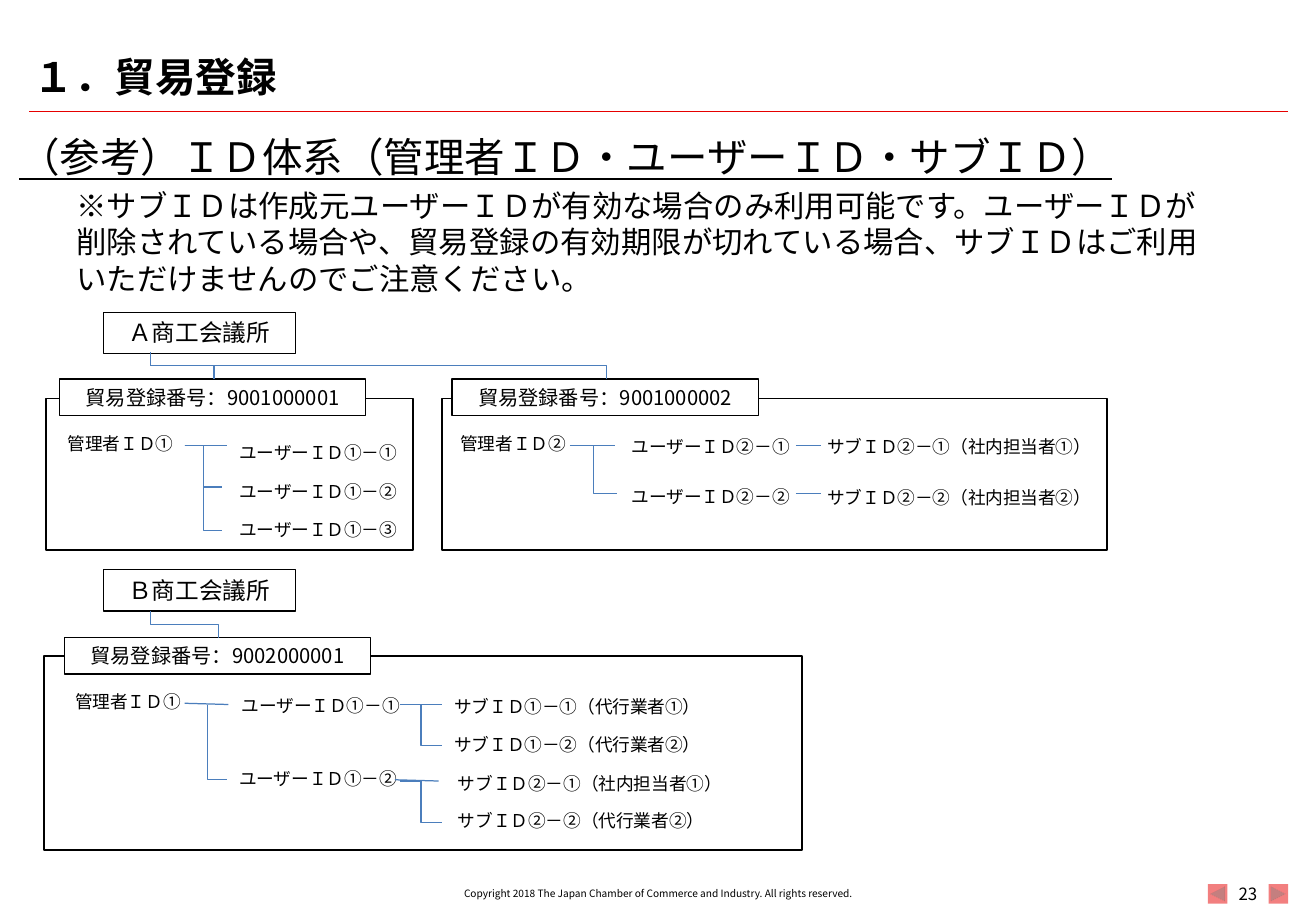
from lxml import etree
from pptx import Presentation
from pptx.dml.color import RGBColor
from pptx.enum.shapes import MSO_CONNECTOR, MSO_SHAPE
from pptx.enum.text import MSO_ANCHOR, MSO_AUTO_SIZE, PP_ALIGN
from pptx.oxml.ns import qn
from pptx.util import Inches, Pt

FONT = "Noto Sans CJK JP"
BLACK = RGBColor(0x00, 0x00, 0x00)
WHITE = RGBColor(0xFF, 0xFF, 0xFF)
RED = RGBColor(0xE6, 0x00, 0x00)
BLUE = RGBColor(0x4B, 0x7E, 0xBC)

presentation = Presentation()
presentation.slide_width = Inches(10.83)
presentation.slide_height = Inches(7.5)
slide = presentation.slides.add_slide(presentation.slide_layouts[6])
shapes = slide.shapes


def write_text(shape, text, size, align=PP_ALIGN.LEFT, anchor=MSO_ANCHOR.TOP):
    frame = shape.text_frame
    frame.word_wrap = True
    frame.vertical_anchor = anchor
    if anchor == MSO_ANCHOR.TOP:
        frame.auto_size = MSO_AUTO_SIZE.SHAPE_TO_FIT_TEXT
    paragraph = frame.paragraphs[0]
    paragraph.text = text
    paragraph.alignment = align
    font = paragraph.font
    font.size = Pt(size)
    font.color.rgb = BLACK
    font.name = FONT
    properties = paragraph._p.pPr.find(qn("a:defRPr"))
    east_asian = etree.Element(qn("a:ea"), typeface=FONT)
    properties.find(qn("a:latin")).addnext(east_asian)
    return paragraph


def add_line(kind, x1, y1, x2, y2, color=BLUE, width=0.75):
    connector = shapes.add_connector(kind, Inches(x1), Inches(y1), Inches(x2), Inches(y2))
    connector.line.color.rgb = color
    connector.line.width = Pt(width)
    etree.SubElement(connector._element.spPr, qn("a:effectLst"))
    return connector


for kind, left in ((MSO_SHAPE.ACTION_BUTTON_BACK_OR_PREVIOUS, 9.94),
                   (MSO_SHAPE.ACTION_BUTTON_FORWARD_OR_NEXT, 10.44)):
    button = shapes.add_shape(kind, Inches(left), Inches(7.28), Inches(0.16), Inches(0.16))
    button.shadow.inherit = False
    button.fill.solid()
    button.fill.fore_color.rgb = RED
    button.line.fill.background()
    color = button._element.spPr.find(qn("a:solidFill"))[0]
    etree.SubElement(color, qn("a:alpha"), val="50000")

add_line(MSO_CONNECTOR.STRAIGHT, 0.24, 0.92, 10.6, 0.92, RED, 0.25)

boxes = [
    ("", 0.36, 5.4, 6.24, 1.6, 1, 0),
    ("", 3.64, 3.28, 5.47, 1.25, 1, 0),
    ("", 0.38, 3.28, 3.02, 1.25, 1, 0),
    ("貿易登録番号：9001000001", 0.49, 3.12, 2.52, 0.3, 0.75, 12),
    ("貿易登録番号：9001000002", 3.72, 3.12, 2.52, 0.3, 0.75, 12),
    ("貿易登録番号：9002000001", 0.53, 5.25, 2.52, 0.3, 0.75, 12),
    ("Ａ商工会議所", 0.85, 2.57, 1.58, 0.34, 0.75, 14),
    ("Ｂ商工会議所", 0.85, 4.69, 1.58, 0.34, 0.75, 14),
]
for text, left, top, width, height, line_width, size in boxes:
    box = shapes.add_shape(MSO_SHAPE.RECTANGLE, Inches(left), Inches(top),
                           Inches(width), Inches(height))
    box.shadow.inherit = False
    box.line.color.rgb = BLACK
    box.line.width = Pt(line_width)
    if size == 12:
        box.fill.solid()
        box.fill.fore_color.rgb = WHITE
    else:
        box.fill.background()
    if text:
        write_text(box, text, size, PP_ALIGN.CENTER)

id_labels = [
    ("管理者ＩＤ①", 0.46, 3.51, 1.18),
    ("ユーザーＩＤ①－①", 1.87, 3.59, 1.81),
    ("ユーザーＩＤ①－②", 1.87, 3.91, 1.81),
    ("ユーザーＩＤ①－③", 1.87, 4.22, 1.81),
    ("管理者ＩＤ②", 3.69, 3.51, 1.18),
    ("ユーザーＩＤ②－①", 5.1, 3.54, 1.81),
    ("ユーザーＩＤ②－②", 5.1, 3.95, 1.81),
    ("サブＩＤ②－①（社内担当者①）", 6.71, 3.54, 2.65),
    ("サブＩＤ②－②（社内担当者②）", 6.71, 3.96, 2.65),
    ("管理者ＩＤ①", 0.52, 5.64, 1.18),
    ("ユーザーＩＤ①－①", 1.89, 5.67, 1.81),
    ("ユーザーＩＤ①－②", 1.87, 6.27, 1.73),
    ("サブＩＤ①－①（代行業者①）", 3.64, 5.68, 2.61),
    ("サブＩＤ①－②（代行業者②）", 3.64, 5.99, 2.61),
    ("サブＩＤ②－①（社内担当者①）", 3.67, 6.31, 2.61),
    ("サブＩＤ②－②（代行業者②）", 3.67, 6.62, 2.61),
]
for text, left, top, width in id_labels:
    label = shapes.add_textbox(Inches(left), Inches(top), Inches(width), Inches(0.29))
    write_text(label, text, 10.5)

straight_links = [
    (1.52, 3.67, 1.87, 3.67),
    (4.71, 3.67, 5.06, 3.67),
    (6.55, 3.67, 6.76, 3.67),
    (6.55, 4.06, 6.76, 4.06),
    (1.52, 5.79, 1.88, 5.8),
    (3.29, 5.8, 3.64, 5.8),
    (3.25, 6.42, 3.61, 6.43),
]
for ends in straight_links:
    add_line(MSO_CONNECTOR.STRAIGHT, *ends)

sideways_branches = [
    (1.52, 3.67, 1.83, 4.37),
    (1.52, 3.67, 1.83, 4.01),
    (4.69, 3.67, 5.08, 4.06),
    (3.29, 5.8, 3.64, 6.14),
    (3.29, 6.43, 3.64, 6.77),
]
for ends in sideways_branches:
    add_line(MSO_CONNECTOR.ELBOW, *ends)

downward_branches = [
    (1.24, 2.9, 1.76, 3.12, "bentConnector3"),
    (1.24, 2.9, 4.99, 3.12, "bentConnector3"),
    (1.24, 5.03, 1.8, 5.25, "bentConnector3"),
    (1.71, 5.8, 1.87, 6.42, "bentConnector2"),
]
for x1, y1, x2, y2, preset in downward_branches:
    across, down = x2 - x1, y2 - y1
    branch = add_line(MSO_CONNECTOR.ELBOW, x1, y1, x2, y2)
    branch.left = Inches((x1 + x2 - down) / 2)
    branch.top = Inches((y1 + y2 - across) / 2)
    branch.width, branch.height = Inches(down), Inches(across)
    properties = branch._element.spPr
    transform = properties.find(qn("a:xfrm"))
    transform.set("rot", "16200000")
    transform.set("flipH", "1")
    properties.find(qn("a:prstGeom")).set("prst", preset)

note = shapes.add_textbox(Inches(0.53), Inches(1.49), Inches(9.46), Inches(1.01))
write_text(note, "※サブＩＤは作成元ユーザーＩＤが有効な場合のみ利用可能です。ユーザーＩＤが"
                 "削除されている場合や、貿易登録の有効期限が切れている場合、サブＩＤはご利用"
                 "いただけませんのでご注意ください。", 18)

title = shapes.add_textbox(Inches(0.18), Inches(0.33), Inches(10.27), Inches(0.59))
write_text(title, "１．貿易登録", 24, anchor=MSO_ANCHOR.MIDDLE).font.bold = True

subtitle = shapes.add_textbox(Inches(0.06), Inches(1.04), Inches(9.45), Inches(0.51))
write_text(subtitle, "（参考）ＩＤ体系（管理者ＩＤ・ユーザーＩＤ・サブＩＤ）", 24).font.underline = True

page_number = shapes.add_textbox(Inches(10.1), Inches(7.28), Inches(0.34), Inches(0.16))
write_text(page_number, "23", 10, PP_ALIGN.CENTER, MSO_ANCHOR.MIDDLE)
page_number.text_frame.margin_left = page_number.text_frame.margin_right = 0

copyright_line = shapes.add_textbox(Inches(2.95), Inches(7.28), Inches(4.93), Inches(0.16))
write_text(copyright_line,
           "Copyright 2018 The Japan Chamber of Commerce and Industry. All rights reserved.",
           6, PP_ALIGN.CENTER, MSO_ANCHOR.MIDDLE)

presentation.save("out.pptx")
